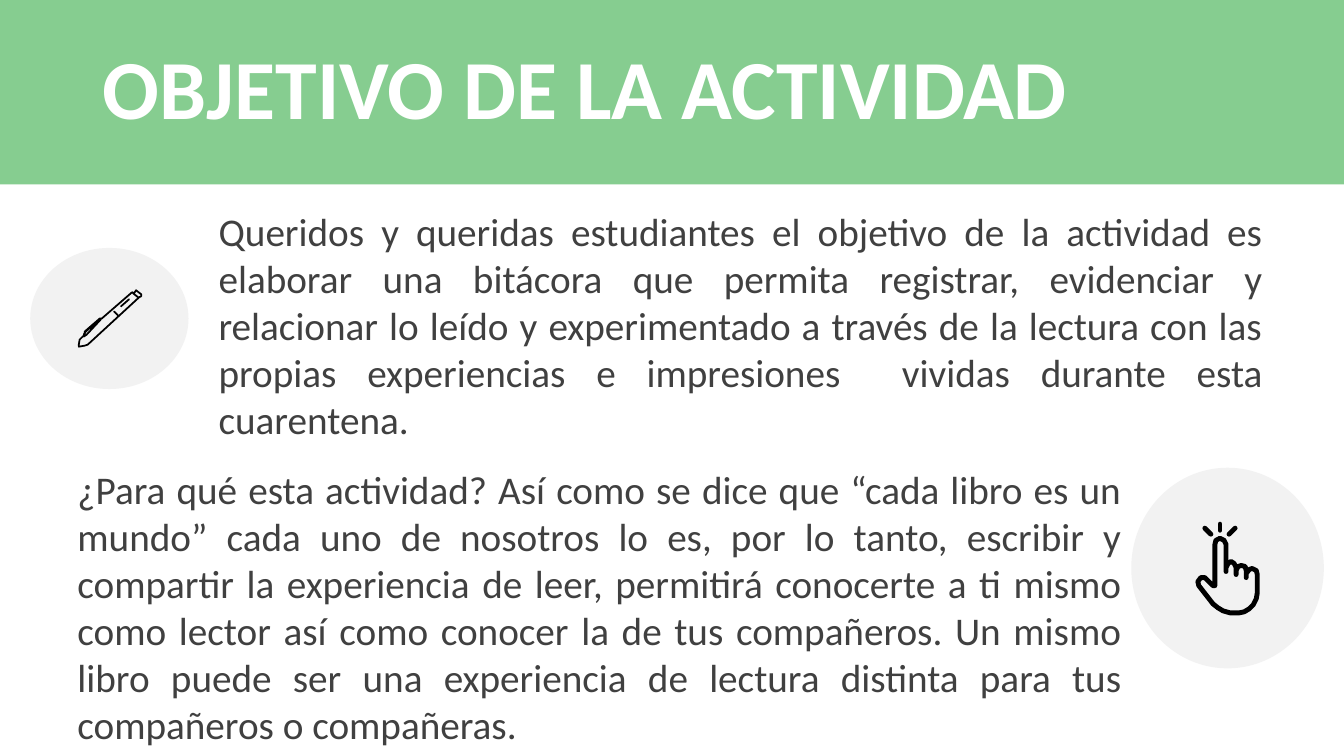
from lxml.etree import SubElement
from pptx import Presentation
from pptx.dml.color import RGBColor
from pptx.enum.shapes import MSO_SHAPE as Kind
from pptx.enum.text import MSO_ANCHOR as Anchor, PP_ALIGN as Align
from pptx.oxml.ns import qn
from pptx.util import Inches, Pt

GREEN, GREY, INK, BLACK, WHITE = "86CD90", "F2F2F2", "404040", "000000", "FFFFFF"
WIDE, HIGH = 13.33, 7.5
UNIT = Inches(0.01)  # icon points are hundredths of an inch

GOAL = (
    "Queridos y queridas estudiantes el objetivo de la actividad es elaborar "
    "una bitácora que permita registrar, evidenciar y relacionar lo leído y "
    "experimentado a través de la lectura con las propias experiencias e "
    "impresiones  vividas durante esta cuarentena."
)
REASON = (
    "¿Para qué esta actividad? Así como se dice que “cada libro es un mundo” "
    "cada uno de nosotros lo es, por lo tanto, escribir y compartir la "
    "experiencia de leer, permitirá conocerte a ti mismo como lector así como "
    "conocer la de tus compañeros. Un mismo libro puede ser una experiencia de "
    "lectura distinta para tus compañeros o compañeras."
)

PEN = [
    [(1, 56), (2, 50), (7, 45), (7, 42), (22, 29), (24, 29), (54, 3), (56, 4),
     (58, 1), (63, 5), (63, 7), (61, 8), (10, 55), (7, 56), (1, 57)],
    [(6, 45), (8, 42), (22, 30), (23, 30), (9, 45), (6, 47)],
    [(36, 22), (40, 26)],
    [(55, 4), (60, 8)],
    [(43, 17), (51, 10)],
]
HAND = [
    [(19, 65), (19, 24), (20, 20), (24, 18), (28, 20), (30, 24), (30, 51),
     (30, 47), (32, 43), (35, 41), (38, 43), (40, 47), (40, 54), (40, 50),
     (42, 46), (45, 45), (49, 46), (50, 50), (50, 57), (50, 53), (53, 49),
     (56, 48), (60, 50), (61, 54), (61, 72), (60, 78), (57, 84), (53, 88),
     (48, 91), (43, 92), (34, 92), (27, 90), (22, 87), (17, 83), (3, 65),
     (2, 61), (5, 57), (9, 57), (17, 65), (19, 65)],
    [(24, 4), (24, 10)],
    [(39, 8), (33, 14)],
    [(9, 8), (15, 14)],
]


def tint(text):
    return RGBColor.from_string(text)


def add_flat(shapes, kind, box, fill):
    shape = shapes.add_shape(kind, *map(Inches, box))
    shape.shadow.inherit = False
    shape.fill.solid()
    shape.fill.fore_color.rgb = tint(fill)
    shape.line.fill.background()
    return shape


def add_icon(shapes, left, top, strokes, width):
    """Draw strokes with round ends and corners from the given corner."""
    pen = shapes.build_freeform(*strokes[0][0], scale=UNIT)
    for stroke in strokes:
        pen.move_to(*stroke[0])
        pen.add_line_segments(stroke[1:], close=False)
    icon = pen.convert_to_shape(Inches(left), Inches(top))
    icon.shadow.inherit = False
    icon.fill.background()
    icon.line.color.rgb = tint(BLACK)
    icon.line.width = Pt(width)
    line = icon.element.spPr.find(qn("a:ln"))
    line.set("cap", "rnd")
    SubElement(line, qn("a:round"))


def add_badge(slide, box, strokes, shift, width):
    """Group a grey disc with its icon, shifted from the disc's corner."""
    shapes = slide.shapes.add_group_shape().shapes
    add_flat(shapes, Kind.OVAL, box, GREY)
    add_icon(shapes, box[0] + shift[0], box[1] + shift[1], strokes, width)


def style(para, size, color, bold=False):
    font = para.font
    font.name, font.size, font.bold = "Calibri", Pt(size), bold
    font.color.rgb = tint(color)


def add_header(slide, box, text):
    left, top, width, height = box
    band = add_flat(slide.shapes, Kind.RECTANGLE, box, GREEN)
    title = slide.shapes.title
    title.element.addprevious(band.element)
    title.left, title.top = Inches(left + 0.92), Inches(top + 0.15)
    title.width, title.height = Inches(width - 1.08), Inches(height - 0.3)
    frame = title.text_frame
    frame.text = text
    frame.vertical_anchor = Anchor.MIDDLE
    para = frame.paragraphs[0]
    para.alignment = Align.LEFT
    para.line_spacing = 0.9
    style(para, 60, WHITE, True)


def add_prose(slide, box, text):
    frame = slide.shapes.add_textbox(*map(Inches, box)).text_frame
    frame.word_wrap = True
    frame.vertical_anchor = Anchor.MIDDLE
    frame.text = text
    para = frame.paragraphs[0]
    para.alignment = Align.JUSTIFY
    style(para, 28, INK)


def main():
    deck = Presentation()
    deck.slide_width, deck.slide_height = Inches(WIDE), Inches(HIGH)
    slide = deck.slides.add_slide(deck.slide_layouts[5])
    add_header(slide, (0, 0, WIDE, 1.83), "OBJETIVO DE LA ACTIVIDAD")
    add_badge(slide, (0.3, 2.46, 1.57, 1.4), PEN, (0.47, 0.41), 1.25)
    add_prose(slide, (2.07, 1.99, 10.55, 2.46), GOAL)
    add_badge(slide, (11.22, 4.64, 1.91, 1.99), HAND, (0.64, 0.52), 3.5)
    add_prose(slide, (0.67, 4.55, 10.55, 2.93), REASON)
    deck.save("out.pptx")


if __name__ == "__main__":
    main()
